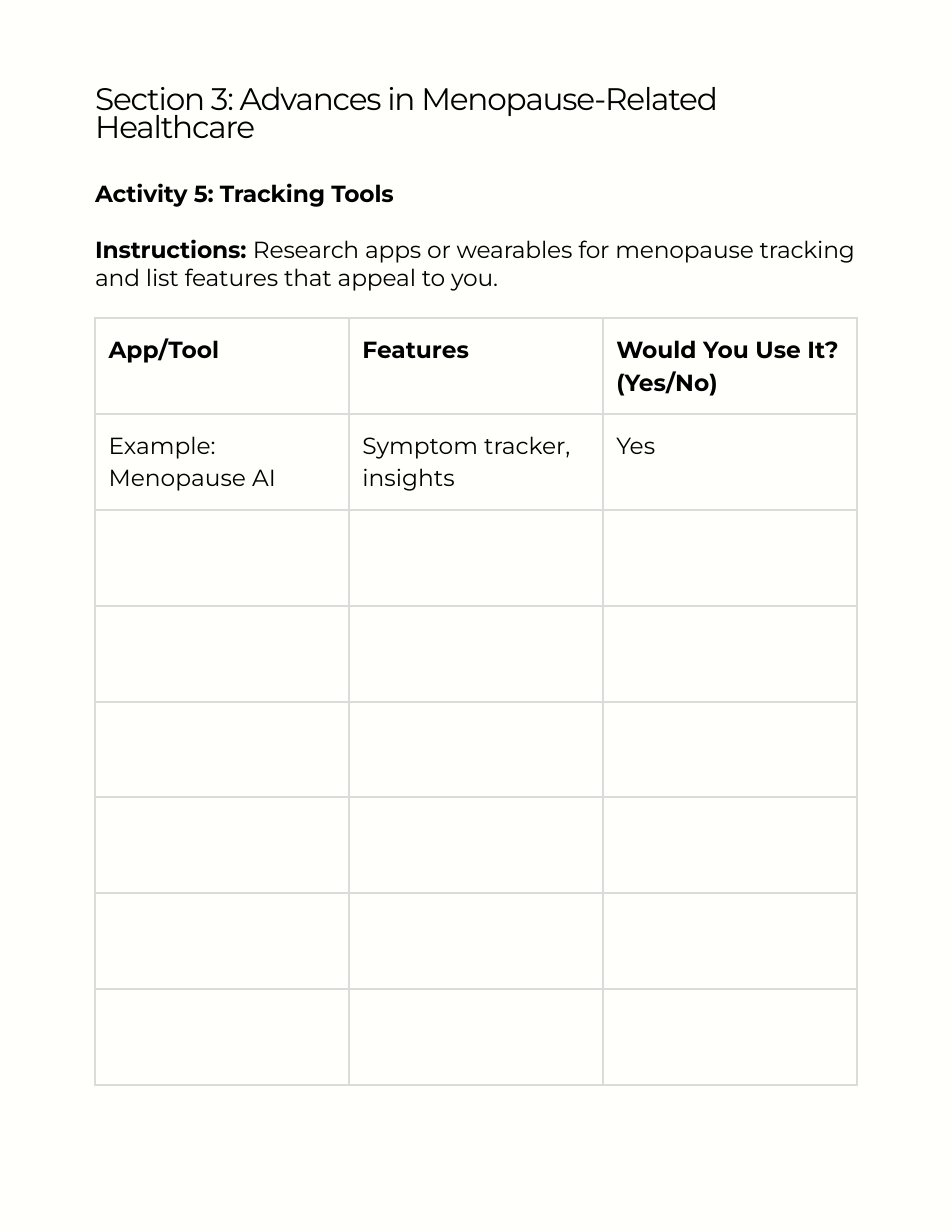
from dataclasses import dataclass

from lxml.etree import SubElement
from pptx import Presentation
from pptx.dml.color import RGBColor
from pptx.oxml.ns import qn
from pptx.util import Inches, Pt


@dataclass(frozen=True)
class Theme:
    font: str = "Montserrat"
    page: str = "FFFFFC"
    ink: str = "000000"
    rule: str = "DBDBDB"
    rule_width: float = 1.5
    title_size: float = 20
    body_size: float = 15
    text_leading: float = 18
    table_leading: float = 21


THEME = Theme()
COLUMN_HEADS = ["App/Tool", "Features", "Would You Use It? (Yes/No)"]
EXAMPLE = ["Example: Menopause AI", "Symptom tracker, insights", "Yes"]
EMPTY_ROWS = 6


def write(paragraph, text, size=THEME.body_size, bold=False,
          leading=THEME.text_leading, before=0, spacing=0):
    """Add a run to the paragraph; spacing is letter spacing in points."""
    paragraph.line_spacing = Pt(leading)
    paragraph.space_before = Pt(before)
    run = paragraph.add_run()
    run.text = text
    run.font.name = THEME.font
    run.font.size = Pt(size)
    run.font.bold = bold
    run.font.color.rgb = RGBColor.from_string(THEME.ink)
    if spacing:
        run.font._element.set("spc", str(round(spacing * 100)))


def add_text_frame(slide, left, top, width, height):
    frame = slide.shapes.add_textbox(
        Inches(left), Inches(top), Inches(width), Inches(height)).text_frame
    frame.word_wrap = True
    frame.margin_left = frame.margin_top = 0
    frame.margin_right = frame.margin_bottom = 0
    return frame


def add_section_title(slide, left, top, width, height):
    title = add_text_frame(slide, left, top, width, height)
    write(title.paragraphs[0],
          "Section 3: Advances in Menopause-Related Healthcare",
          size=THEME.title_size, spacing=-0.8)


def add_activity(slide, left, top, width, height):
    activity = add_text_frame(slide, left, top, width, height)
    write(activity.paragraphs[0], "Activity 5: Tracking Tools",
          bold=True, spacing=-0.1)
    instructions = activity.add_paragraph()
    gap = THEME.text_leading
    write(instructions, "Instructions: ", bold=True, before=gap, spacing=-0.1)
    write(instructions,
          "Research apps or wearables for menopause tracking and list "
          "features that appeal to you.", before=gap, spacing=-0.1)


def style_cell(cell):
    cell.margin_left = cell.margin_right = Inches(0.12)
    cell.margin_top = cell.margin_bottom = Inches(0.12)
    properties = cell._tc.get_or_add_tcPr()
    for side in ("a:lnL", "a:lnR", "a:lnT", "a:lnB"):
        border = SubElement(properties, qn(side), w=str(Pt(THEME.rule_width)))
        fill = SubElement(border, qn("a:solidFill"))
        SubElement(fill, qn("a:srgbClr"), val=THEME.rule)
    cell.fill.background()


def add_tracking_table(slide, left, top, width, height):
    rows = [COLUMN_HEADS, EXAMPLE] + [[""] * len(COLUMN_HEADS)] * EMPTY_ROWS
    table = slide.shapes.add_table(
        len(rows), len(COLUMN_HEADS), Inches(left), Inches(top),
        Inches(width), Inches(height)).table
    table.first_row = table.horz_banding = False
    for row_index, entries in enumerate(rows):
        for column_index, entry in enumerate(entries):
            cell = table.cell(row_index, column_index)
            style_cell(cell)
            if entry:
                write(cell.text_frame.paragraphs[0], entry,
                      bold=row_index == 0, leading=THEME.table_leading)


def build_worksheet(deck):
    slide = deck.slides.add_slide(deck.slide_layouts[6])
    background = slide.background.fill
    background.solid()
    background.fore_color.rgb = RGBColor.from_string(THEME.page)

    left, width = 0.85, 6.8
    add_section_title(slide, left, 0.79, width, 0.51)
    add_activity(slide, left, 1.6, width, 0.93)
    add_tracking_table(slide, left, 2.84, width, 6.85)


def main():
    deck = Presentation()
    deck.slide_width = Inches(8.5)
    deck.slide_height = Inches(11)
    build_worksheet(deck)
    deck.save("out.pptx")


if __name__ == "__main__":
    main()
